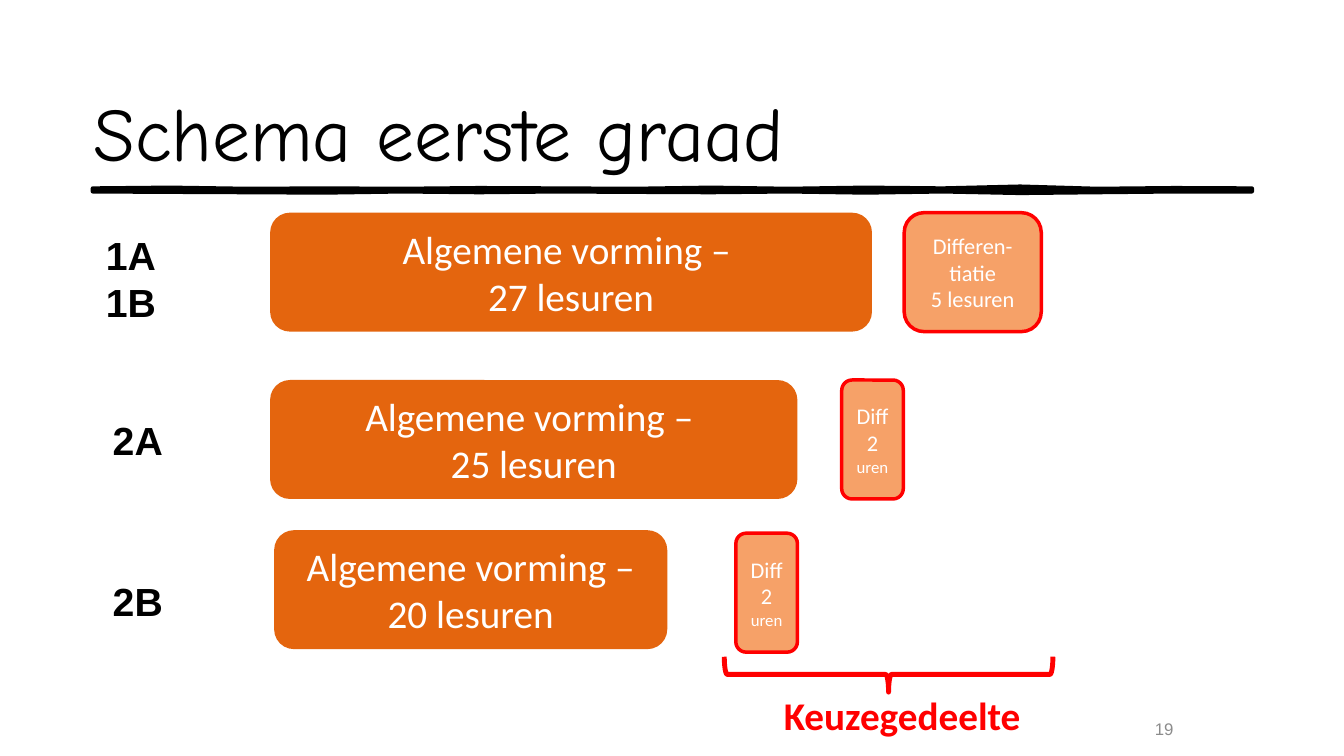
import pptx
import pptx.util
import pptx.dml.color
import pptx.enum.shapes
import pptx.enum.text

WIDE, HIGH = 13.333, 7.5
BLACK, WHITE, RED = "000000", "FFFFFF", "FF0000"
ROW = 15.73
TEXTS = [
    ((6.23, 12.13, 92.85, 10.93), [[("Schema eerste graad", 54)]],
     "Comic Neue", BLACK, False, "LEFT", "TOP", 0.9),
    ((70.58, 93.73, 17.48, 5.33), [[("19", 12)]],
     "Arial", "8C8C8C", False, "RIGHT", "MIDDLE", 1),
    ((7.13, 30, 8.03, 13.87), [[("1A", 28)], [("1B", 28)]],
     "Arial", BLACK, True, "LEFT", "TOP", 1),
    ((7.65, 54.4, 8.03, 7.6), [[("2A", 28)]],
     "Arial", BLACK, True, "LEFT", "TOP", 1),
    ((7.65, 75.73, 8.03, 7.6), [[("2B", 28)]],
     "Arial", BLACK, True, "LEFT", "TOP", 1),
    ((54.9, 90.8, 24.45, 7.6), [[("Keuzegedeelte", 28)]],
     "Calibri", RED, True, "CENTER", "TOP", 1),
]
CORE = [
    ((20.1, 28.13, 44.78, ROW), [[("Algemene vorming – \n27 lesuren", 28)]]),
    ((20.1, 50.27, 39.23, ROW), [[("Algemene vorming – \n25 lesuren", 28)]]),
    ((20.4, 70.13, 29.25, ROW), [[("Algemene vorming – 20 lesuren", 28)]]),
]
SHORT = [[("Diff 2 ", 16), ("uren", 12)]]
EXTRA = [
    ((67.28, 28.13, 10.2, ROW), [[("Differen-tiatie", 16)], [("5 lesuren", 16)]]),
    ((62.63, 50.27, 4.58, ROW), SHORT),
    ((54.75, 70.53, 4.58, ROW), SHORT),
]
BRACE = (64.8, 67.47, 2.63, 43.47)
RULE = (6.9, 24.93, 86.25, 0.4)
TOP = [0, -0.1, 0.05, 0, 0.05, -0.05, 0, 0.05, -0.1, 0.05, -0.1, 0, -0.25, 0.05, -0.05, 0]
LOW = [0, 0.05, 0.1, 0.15, 0, 0.1, 0, 0.05, 0.1, 0, 0.15, 0, 0.2, 0.1, 0, 0]

deck = pptx.Presentation()
deck.slide_width = pptx.util.Inches(WIDE)
deck.slide_height = pptx.util.Inches(HIGH)
slide = deck.slides.add_slide(deck.slide_layouts[6])
KIND = pptx.enum.shapes.MSO_SHAPE


def tint(code):
    return pptx.dml.color.RGBColor.from_string(code)


def place(box):
    return [pptx.util.Inches(part * size / 100)
            for part, size in zip(box, (WIDE, HIGH) * 2)]


def apply(target, form):
    for name, value in form.items():
        setattr(target, name, value)


def write(shape, paras, face, color, bold, align, anchor, space):
    frame = shape.text_frame
    apply(frame, {"word_wrap": True,
                  "vertical_anchor": pptx.enum.text.MSO_ANCHOR[anchor]})
    for index, runs in enumerate(paras):
        para = frame.add_paragraph() if index else frame.paragraphs[0]
        apply(para, {"alignment": pptx.enum.text.PP_ALIGN[align],
                     "line_spacing": space})
        for text, size in runs:
            for count, line in enumerate(text.split("\n")):
                if count:
                    para.add_line_break()
                run = para.add_run()
                run.text = line
                apply(run.font, {"name": face, "bold": bold,
                                 "size": pptx.util.Pt(size)})
                run.font.color.rgb = tint(color)


def paint(shape, fill, edge, width):
    shape.shadow.inherit = False
    for part, code in ((shape.fill, fill), (shape.line.fill, edge)):
        if code:
            part.solid()
            part.fore_color.rgb = tint(code)
        else:
            part.background()
    if edge:
        shape.line.width = pptx.util.Pt(width)


def stroke():
    left, top, width, depth = RULE
    step = width / (len(TOP) - 1)
    upper = [(left + i * step, top + d) for i, d in enumerate(TOP)]
    lower = [(left + i * step, top + depth + d) for i, d in enumerate(LOW)]
    dots = [place(dot) for dot in upper + lower[::-1]]
    form = slide.shapes.build_freeform(*dots[0], scale=1.0)
    form.add_line_segments(dots[1:], close=True)
    paint(form.convert_to_shape(), BLACK, BLACK, 3)


def main():
    stroke()
    for group, fill, edge in ((CORE, "E4650E", None), (EXTRA, "F6A168", RED)):
        for box, paras in group:
            shape = slide.shapes.add_shape(KIND.ROUNDED_RECTANGLE, *place(box))
            paint(shape, fill, edge, 2.5)
            write(shape, paras, "Calibri", WHITE, False, "CENTER", "MIDDLE", 1)
    brace = slide.shapes.add_shape(KIND.LEFT_BRACE, *place(BRACE))
    brace.rotation = 270
    paint(brace, None, RED, 3.5)
    for box, *rest in TEXTS:
        write(slide.shapes.add_textbox(*place(box)), *rest)
    deck.save("out.pptx")


if __name__ == "__main__":
    main()
